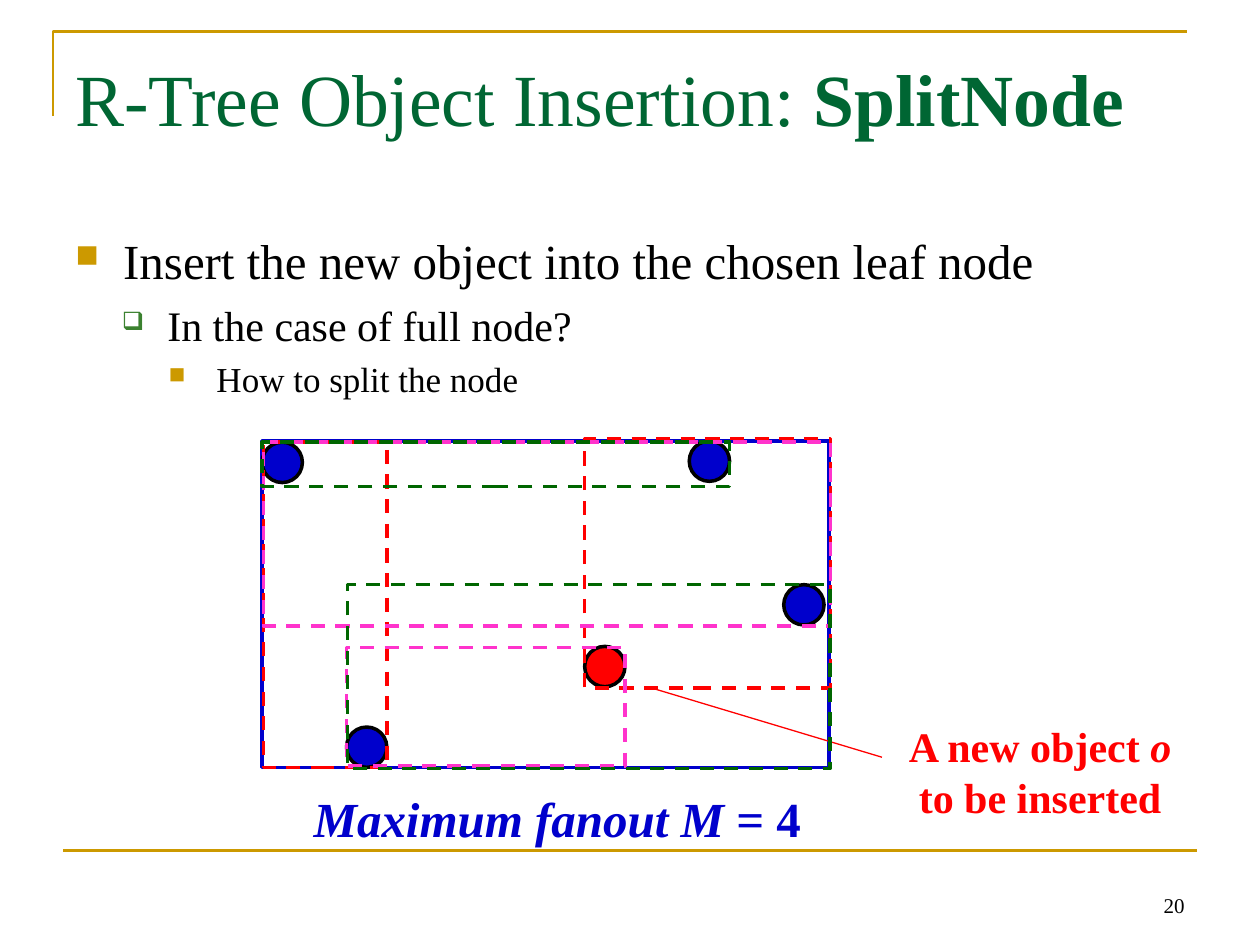
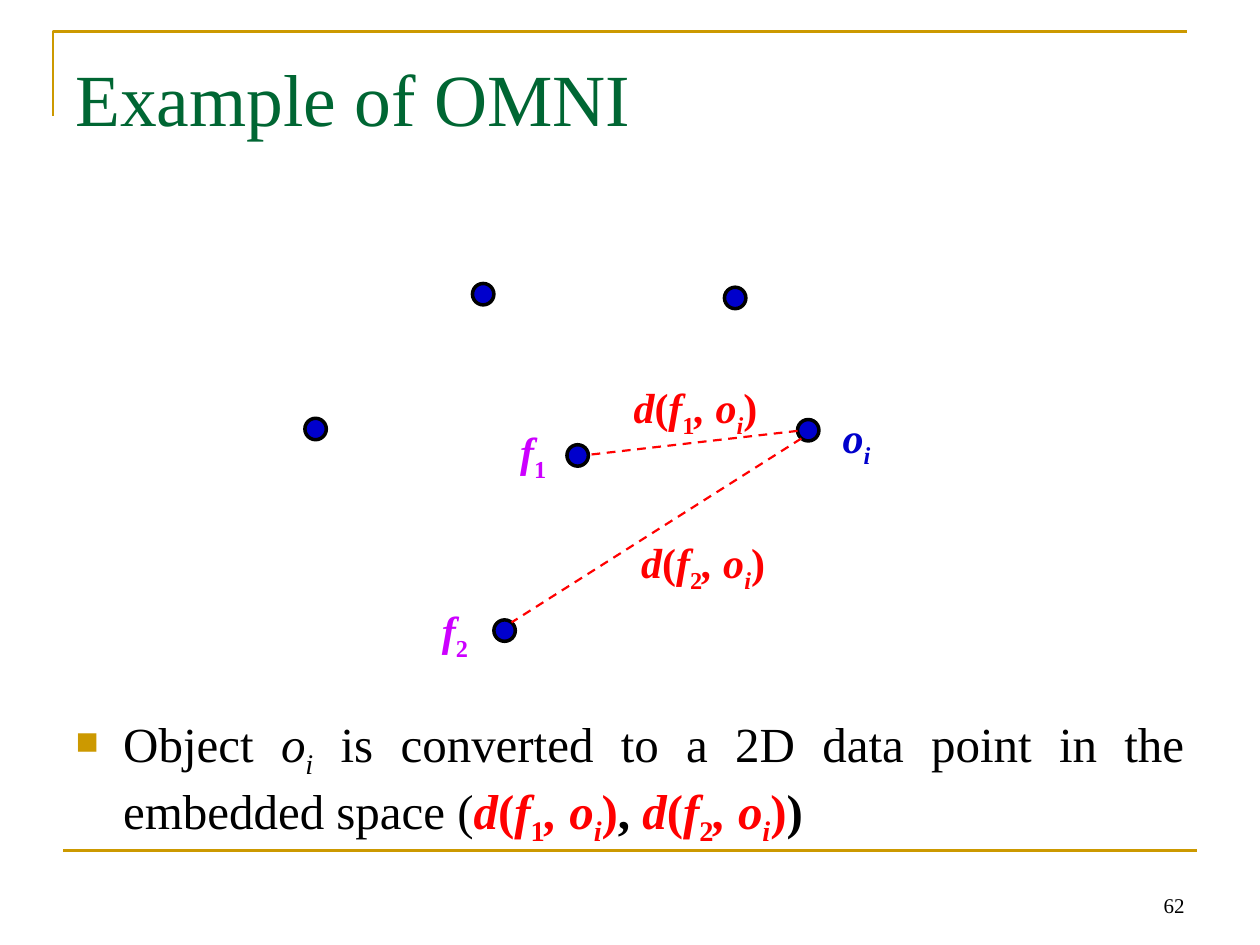
from lxml import etree
from pptx import Presentation
from pptx.dml.color import RGBColor
from pptx.enum import dml, shapes, text
from pptx.oxml import ns
from pptx.util import Inches, Pt

FONT = "Times New Roman"
GOLD, TITLE_GREEN, BULLET_GREEN, BOX_GREEN = "CC9900", "006633", "3B812F", "006600"
BLUE, RED, PINK, PURPLE = "0000CC", "FF0000", "FF33CC", "CC00FF"
BLACK, WHITE = "000000", "FFFFFF"
ALIGN = text.PP_ALIGN

# Bullet levels: left indent, hanging indent, symbol, symbol colour, symbol percent, text size
LEVELS = [
    (0.38, 0.38, "■", GOLD, 65, 28),
    (0.73, 0.36, "❑", BULLET_GREEN, 60, 24),
    (1.12, 0.38, "■", GOLD, 65, 20),
]


def rgb(value):
    return RGBColor.from_string(value)


def add_xml(parent, tag, **attributes):
    return etree.SubElement(parent, ns.qn(tag), attributes)


def distance(focus, color=RED):
    """Runs for the distance between a focus and the object o_i."""
    return [("d", "bi", color), ("(", "b", color), ("f", "bi", color), (focus, "bs", color),
            (", o", "bi", color), ("i", "bis", color), (")", "b", color)]


class SlideBuilder:
    """Draws elements in the shared style on the current slide."""

    def __init__(self, deck):
        self.deck = deck
        self.page = None

    def new_page(self, title_runs, number):
        self.page = self.deck.slides.add_slide(self.deck.slide_layouts[6])
        self.corner()
        self.line((0.5, 6.75), (9.5, 6.75), GOLD, 1.5)
        self.label((0.5, 0.3, 9, 1.25), title_runs, 42, TITLE_GREEN, wrap=True, top=0.12)
        self.label((7.17, 6.83, 2.33, 0.5), [(str(number), "")], 12, BLACK, ALIGN.RIGHT,
                   wrap=True, anchor=text.MSO_ANCHOR.BOTTOM)

    def corner(self):
        outline = self.page.shapes.build_freeform(Inches(0.42), Inches(0.92))
        outline.add_line_segments([(Inches(0.42), Inches(0.25)), (Inches(9.42), Inches(0.25))],
                                  close=False)
        self.paint(outline.convert_to_shape(), None, GOLD, 1.5)

    def paint(self, shape, fill, line, width, dashed=False):
        shape.shadow.inherit = False
        if fill:
            shape.fill.solid()
            shape.fill.fore_color.rgb = rgb(fill)
        else:
            shape.fill.background()
        self.stroke(shape, line, width, dashed)

    def stroke(self, shape, color, width, dashed):
        shape.line.color.rgb = rgb(color)
        shape.line.width = Pt(width)
        if dashed:
            shape.line.dash_style = dml.MSO_LINE.DASH

    def line(self, start, end, color, width, dashed=False):
        ends = [Inches(value) for value in (*start, *end)]
        line = self.page.shapes.add_connector(shapes.MSO_CONNECTOR.STRAIGHT, *ends)
        self.stroke(line, color, width, dashed)
        add_xml(line._element.spPr, "a:effectLst")

    def rectangle(self, place, color, fill=None, dashed=True):
        shape = self.page.shapes.add_shape(shapes.MSO_SHAPE.RECTANGLE, *map(Inches, place))
        self.paint(shape, fill, color, 2, dashed)

    def dot(self, left, top, size, color=BLUE):
        shape = self.page.shapes.add_shape(
            shapes.MSO_SHAPE.OVAL, *map(Inches, (left, top, size, size)))
        self.paint(shape, color, BLACK, 2)

    def text_frame(self, place, wrap, anchor=text.MSO_ANCHOR.TOP, top=0.05):
        frame = self.page.shapes.add_textbox(*map(Inches, place)).text_frame
        frame.word_wrap = wrap
        frame.vertical_anchor = anchor
        frame.margin_top = Inches(top)
        return frame

    def add_runs(self, para, runs, size, color):
        """Each run is (text, style[, colour]); style letters: b bold, i italic, s subscript."""
        for words, style, *own_color in runs:
            span = para.add_run()
            span.text = words
            span.font.name = FONT
            span.font.size = Pt(size)
            span.font.bold = "b" in style
            span.font.italic = "i" in style
            span.font.color.rgb = rgb(own_color[0] if own_color else color)
            if "s" in style:
                span._r.get_or_add_rPr().set("baseline", "-25000")

    def label(self, place, runs, size, color, align=ALIGN.LEFT, wrap=False, **frame_options):
        para = self.text_frame(place, wrap, **frame_options).paragraphs[0]
        para.alignment = align
        self.add_runs(para, runs, size, color)

    def bullets(self, place, items):
        """Each item is (level, runs)."""
        frame = self.text_frame(place, True, top=0.08)
        for index, (level, runs) in enumerate(items):
            para = frame.add_paragraph() if index else frame.paragraphs[0]
            left, hanging, symbol, color, percent, size = LEVELS[level]
            para.level = level
            para.alignment = ALIGN.JUSTIFY
            para.space_before = Pt(size * 0.23 if index else 0)
            props = para._p.get_or_add_pPr()
            props.set("marL", str(Inches(left)))
            props.set("indent", str(-Inches(hanging)))
            add_xml(add_xml(props, "a:buClr"), "a:srgbClr", val=color)
            add_xml(props, "a:buSzPct", val=str(percent * 1000))
            add_xml(props, "a:buChar", char=symbol)
            self.add_runs(para, runs, size, BLACK)


def split_node_page(builder):
    builder.new_page([("R-Tree Object Insertion: ", ""), ("SplitNode", "b")], 20)
    builder.bullets((0.5, 1.75, 9, 1.6), [
        (0, [("Insert the new object into the chosen leaf node", "")]),
        (1, [("In the case of full node?", "")]),
        (2, [("How to split the node", "")]),
    ])
    builder.rectangle((2.08, 3.5, 4.5, 2.59), BLUE, WHITE, dashed=False)
    builder.dot(4.64, 5.13, 0.32, RED)
    for left, top in [(2.08, 3.51), (6.22, 4.64), (5.47, 3.5), (2.75, 5.77)]:
        builder.dot(left, top, 0.32)
    builder.label((2.39, 6.21, 4.11, 0.57),
                  [("Maximum fanout M ", "bi"), ("= 4", "b")], 28, BLUE)
    builder.label((7, 5.67, 2.51, 0.91),
                  [("A new object ", "b"), ("o", "bi"), (" to be inserted", "b")],
                  24, RED, ALIGN.CENTER, wrap=True)
    builder.line((5.17, 5.46), (7, 6.01), RED, 0.75)
    candidate_splits = {
        RED: [(4.64, 3.48, 1.95, 1.98), (2.09, 3.51, 0.98, 2.58)],
        PINK: [(2.75, 5.14, 2.21, 0.94), (2.09, 3.51, 4.5, 1.46)],
        BOX_GREEN: [(2.76, 4.64, 3.83, 1.46), (2.08, 3.51, 3.71, 0.35)],
    }
    for color, places in candidate_splits.items():
        for place in places:
            builder.rectangle(place, color)


def omni_page(builder):
    builder.new_page([("Example of OMNI", "")], 62)
    builder.bullets((0.5, 5.58, 9, 1.12), [(0, [
        ("Object ", ""), ("o", "i"), ("i", "is"),
        (" is converted to a 2D data point in the embedded space (", ""),
        *distance("1"), (", ", "b"), *distance("2"), (")", "b"),
    ])])
    for left, top in [(3.75, 2.25), (6.33, 3.33), (2.42, 3.32),
                      (3.92, 4.92), (5.75, 2.28), (4.5, 3.53)]:
        builder.dot(left, top, 0.17)
    point_names = [(4.03, 3.33, "f", "1", "bs", PURPLE),
                   (3.41, 4.75, "f", "2", "bs", PURPLE),
                   (6.59, 3.22, "o", "i", "bis", BLUE)]
    for left, top, name, index, index_style, color in point_names:
        builder.label((left, top, 0.43, 0.5), [(name, "bi"), (index, index_style)], 24, color)
    builder.line((6.33, 3.42), (4.67, 3.61), RED, 1.25, dashed=True)
    builder.line((6.36, 3.48), (4.06, 4.94), RED, 1.25, dashed=True)
    for left, top, focus in [(4.93, 2.98, "1"), (4.99, 4.21, "2")]:
        builder.label((left, top, 1.3, 0.5), distance(focus), 24, RED)


def main():
    deck = Presentation()
    deck.slide_width, deck.slide_height = Inches(10), Inches(7.5)
    builder = SlideBuilder(deck)
    split_node_page(builder)
    omni_page(builder)
    deck.save("out.pptx")


if __name__ == "__main__":
    main()
